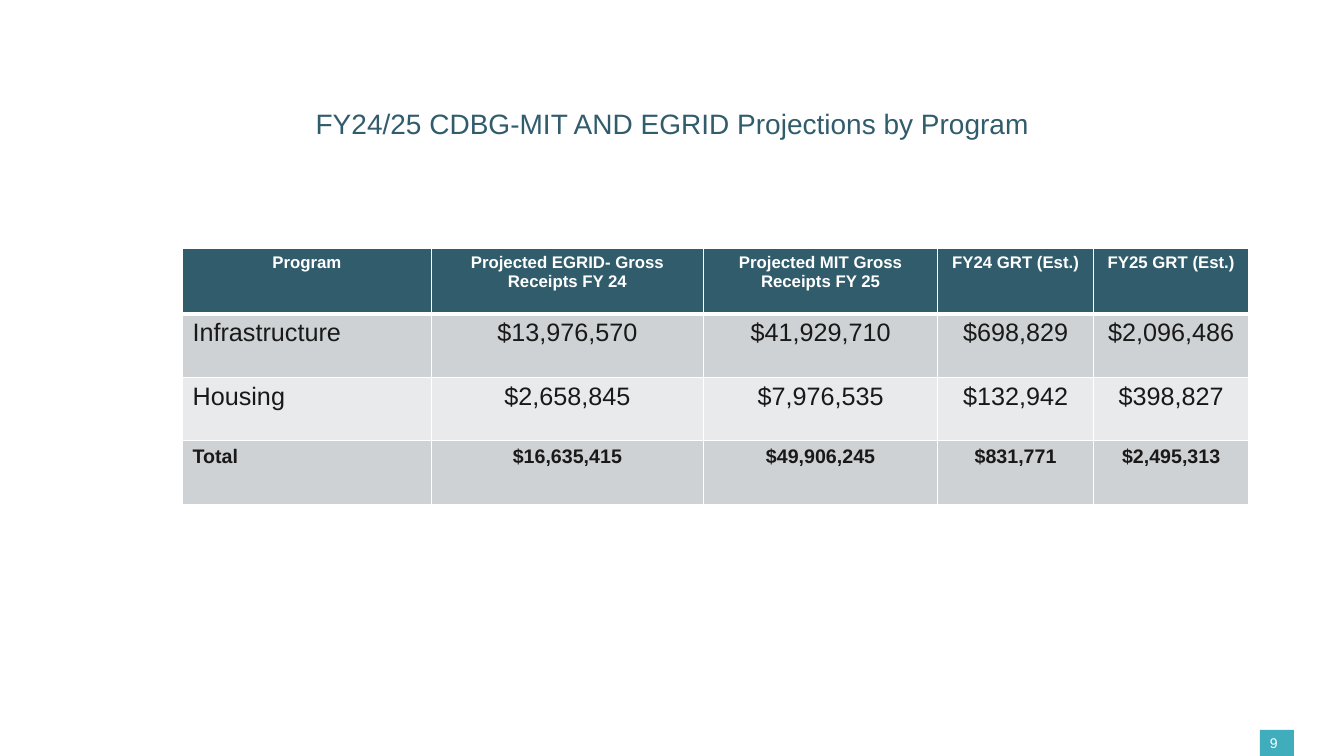
from dataclasses import dataclass

from lxml import etree
from pptx import Presentation
from pptx.dml.color import RGBColor
from pptx.enum.shapes import MSO_SHAPE
from pptx.enum.text import MSO_ANCHOR, PP_ALIGN
from pptx.oxml.ns import qn
from pptx.util import Cm, Pt

LEFT, CENTER = PP_ALIGN.LEFT, PP_ALIGN.CENTER
TOP = MSO_ANCHOR.TOP
RECT = MSO_SHAPE.RECTANGLE
TITLE_ONLY = 5


@dataclass(frozen=True)
class Theme:
    """Hold the colours, font and type sizes of the slide."""
    font: str = "Arial"
    dark: str = "315C6C"
    teal: str = "3FADBB"
    ink: str = "191919"
    white: str = "FFFFFF"
    band: str = "CED2D4"
    pale: str = "E8EAEB"
    title: int = 20
    body: int = 18
    total: int = 14
    head: int = 12
    page: int = 10


THEME = Theme()
TITLE = "FY24/25 CDBG-MIT AND EGRID Projections by Program"
ROWS = [
    ("Program", "Projected EGRID- Gross Receipts FY 24",
     "Projected MIT Gross Receipts FY 25", "FY24 GRT (Est.)", "FY25 GRT (Est.)"),
    ("Infrastructure", "$13,976,570", "$41,929,710", "$698,829", "$2,096,486"),
    ("Housing", "$2,658,845", "$7,976,535", "$132,942", "$398,827"),
    ("Total", "$16,635,415", "$49,906,245", "$831,771", "$2,495,313"),
]
STYLES = [
    (THEME.dark, THEME.white, THEME.head, True),
    (THEME.band, THEME.ink, THEME.body, False),
    (THEME.pale, THEME.ink, THEME.body, False),
    (THEME.band, THEME.ink, THEME.total, True),
]
WIDTHS = (6.27, 6.86, 5.9, 3.93, 3.91)
HEIGHTS = (1.66, 1.6, 1.6, 1.6)


def write(frame, text, size, color, bold=False, align=LEFT):
    """Put one styled run in the first paragraph of a text frame."""
    para = frame.paragraphs[0]
    para.alignment = align
    run = para.add_run()
    run.text = text
    font = run.font
    font.name, font.size, font.bold = THEME.font, Pt(size), bold
    font.color.rgb = RGBColor.from_string(color)
    return para


def edge(cell, side, width):
    """Draw one white border of a cell."""
    props = cell._tc.get_or_add_tcPr()
    line = etree.SubElement(props, qn(f"a:ln{side}"), w=str(Pt(width)))
    fill = etree.SubElement(line, qn("a:solidFill"))
    etree.SubElement(fill, qn("a:srgbClr"), val=THEME.white)


def add_title(slide, left, top, width, height):
    """Place and format the title in its box."""
    shape = slide.shapes.title
    shape.left, shape.top = Cm(left), Cm(top)
    shape.width, shape.height = Cm(width), Cm(height)
    shape.text_frame.vertical_anchor = TOP
    para = write(shape.text_frame, TITLE, THEME.title, THEME.dark, align=CENTER)
    para.line_spacing = 0.9


def add_grid(slide, left, top):
    """Place the projections table from its top left corner."""
    frame = slide.shapes.add_table(
        len(ROWS), len(WIDTHS), Cm(left), Cm(top),
        Cm(sum(WIDTHS)), Cm(sum(HEIGHTS)))
    table = frame.table
    table.horz_banding = False
    for col, width in zip(table.columns, WIDTHS):
        col.width = Cm(width)
    for i, (texts, style) in enumerate(zip(ROWS, STYLES)):
        back, color, size, bold = style
        table.rows[i].height = Cm(HEIGHTS[i])
        for j, text in enumerate(texts):
            cell = table.cell(i, j)
            edge(cell, "L", 1)
            edge(cell, "R", 1)
            edge(cell, "T", 3 if i == 1 else 1)
            edge(cell, "B", 3 if i == 0 else 1)
            cell.fill.solid()
            cell.fill.fore_color.rgb = RGBColor.from_string(back)
            align = LEFT if i and j == 0 else CENTER
            write(cell.text_frame, text, size, color, bold, align)


def add_page(slide, left, top, width, height):
    """Place the page number over its teal tab."""
    tab = slide.shapes.add_shape(RECT, Cm(left), Cm(top), Cm(width), Cm(height))
    tab.shadow.inherit = False
    tab.fill.solid()
    tab.fill.fore_color.rgb = RGBColor.from_string(THEME.teal)
    tab.line.fill.background()
    box = slide.shapes.add_textbox(
        Cm(left), Cm(top), Cm(width + 0.2), Cm(height + 0.2))
    box.text_frame.word_wrap = True
    write(box.text_frame, "9", THEME.page, THEME.white)


def main():
    """Build the slide and save it."""
    deck = Presentation()
    deck.slide_width, deck.slide_height = Cm(33.87), Cm(19.05)
    slide = deck.slides.add_slide(deck.slide_layouts[TITLE_ONLY])
    add_title(slide, 1.78, 2.64, 30.33, 1.55)
    add_grid(slide, 4.6, 6.25)
    add_page(slide, 31.75, 18.39, 0.86, 0.66)
    deck.save("out.pptx")


if __name__ == "__main__":
    main()
